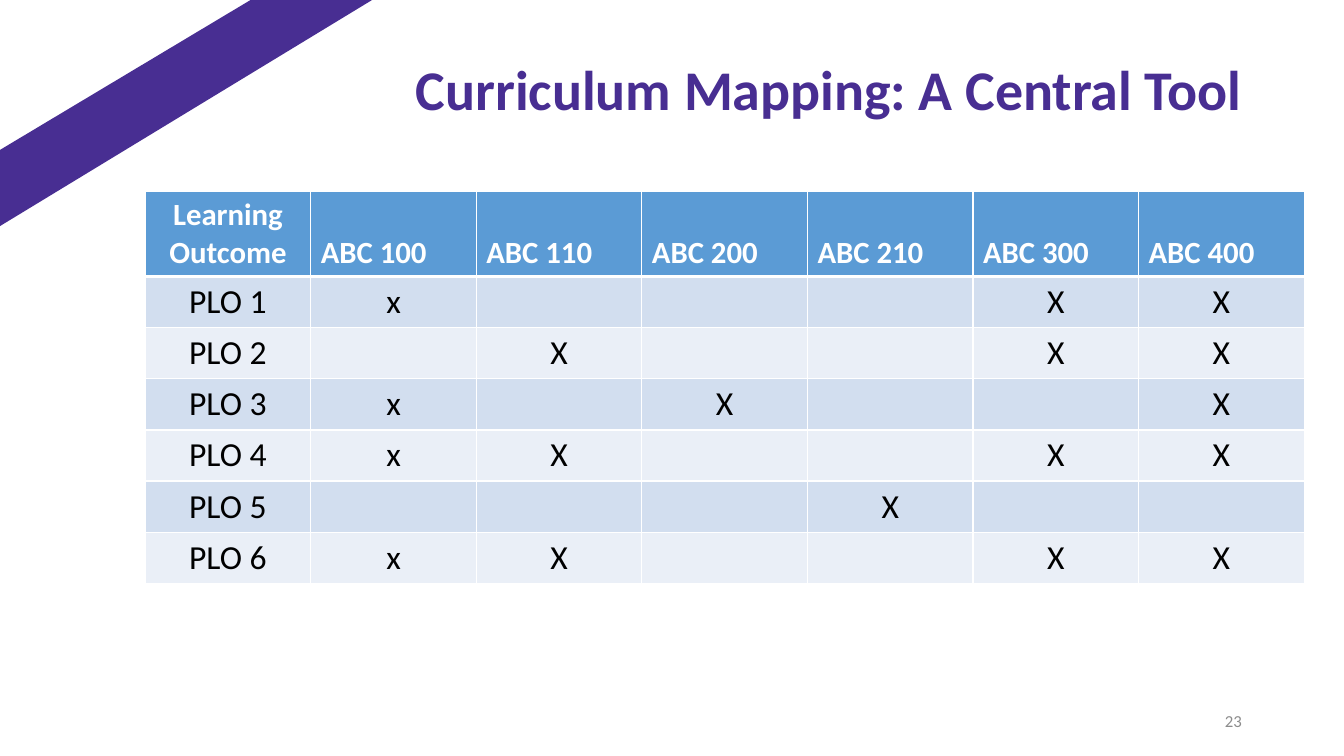
from dataclasses import dataclass

from lxml.etree import SubElement
from pptx import Presentation
from pptx.dml.color import RGBColor
from pptx.enum.text import MSO_ANCHOR as Anchor, PP_ALIGN as Align
from pptx.oxml.ns import qn
from pptx.util import Pt

TITLE = "Curriculum Mapping: A Central Tool"
SLIDE_NUMBER = "23"
HEADERS = ["Learning Outcome", "ABC 100", "ABC 110", "ABC 200",
           "ABC 210", "ABC 300", "ABC 400"]
OUTCOMES = [
    ("PLO 1", "x", "", "", "", "X", "X"),
    ("PLO 2", "", "X", "", "", "X", "X"),
    ("PLO 3", "x", "", "X", "", "", "X"),
    ("PLO 4", "x", "X", "", "", "X", "X"),
    ("PLO 5", "", "", "", "X", "", ""),
    ("PLO 6", "x", "X", "", "", "X", "X"),
]

# Left, top, width, height in points
TITLE_BOX = (66.2, 41, 828, 53.3)
NUMBER_BOX = (678.2, 500.4, 216, 28.8)
TABLE_LEFT, TABLE_TOP, TABLE_WIDTH = 103.7, 136.8, 828
HEADER_HEIGHT, ROW_HEIGHT = 60.8, 36.4
RIBBON = [(-7.5, 111.6), (192.2, -7.9), (242.6, -7.9), (276.5, -6.5), (-7.9, 166.3)]


@dataclass(frozen=True)
class Theme:
    font: str = "Calibri"
    purple: str = "482E92"
    header: str = "5B9BD5"
    bands: tuple = ("D2DEEF", "EAEFF7")
    white: str = "FFFFFF"
    black: str = "000000"
    grey: str = "8C8C8C"
    title_size: int = 40
    header_size: int = 22
    body_size: int = 24
    number_size: int = 12
    thin: int = 1
    thick: int = 3


THEME = Theme()


def write(frame, text, size, color, align, bold=False):
    frame.text = text
    paragraph = frame.paragraphs[0]
    paragraph.alignment = align
    for run in paragraph.runs:
        font = run.font
        font.name, font.size, font.bold = THEME.font, Pt(size), bold
        font.color.rgb = RGBColor.from_string(color)
    return paragraph


def place(shape, box):
    shape.left, shape.top, shape.width, shape.height = map(Pt, box)


def set_borders(cell, top, bottom):
    """Draw white cell borders; call before the cell is filled."""
    properties = cell._tc.get_or_add_tcPr()
    widths = {"lnL": THEME.thin, "lnR": THEME.thin, "lnT": top, "lnB": bottom}
    for side, width in widths.items():
        line = SubElement(properties, qn(f"a:{side}"), w=str(Pt(width)))
        fill = SubElement(line, qn("a:solidFill"))
        SubElement(fill, qn("a:srgbClr"), val=THEME.white)


def add_ribbon(slide):
    points = [(Pt(x), Pt(y)) for x, y in RIBBON]
    builder = slide.shapes.build_freeform(*points[0])
    builder.add_line_segments(points[1:], close=True)
    ribbon = builder.convert_to_shape()
    ribbon.shadow.inherit = False
    ribbon.fill.solid()
    ribbon.fill.fore_color.rgb = RGBColor.from_string(THEME.purple)
    ribbon.line.fill.background()


def add_title(slide):
    title = slide.shapes.title
    place(title, TITLE_BOX)
    frame = title.text_frame
    frame.word_wrap = True
    frame.vertical_anchor = Anchor.TOP
    paragraph = write(frame, TITLE, THEME.title_size, THEME.purple, Align.RIGHT, True)
    paragraph.line_spacing = 0.9


def add_curriculum_map(slide):
    rows = [HEADERS, *OUTCOMES]
    height = HEADER_HEIGHT + ROW_HEIGHT * len(OUTCOMES)
    table = slide.shapes.add_table(
        len(rows), len(HEADERS),
        *map(Pt, (TABLE_LEFT, TABLE_TOP, TABLE_WIDTH, height))).table
    table.first_row = table.horz_banding = False
    for column in table.columns:
        column.width = Pt(TABLE_WIDTH / len(HEADERS))
    for r, values in enumerate(rows):
        is_header = r == 0
        table.rows[r].height = Pt(HEADER_HEIGHT if is_header else ROW_HEIGHT)
        fill = THEME.header if is_header else THEME.bands[(r - 1) % 2]
        size = THEME.header_size if is_header else THEME.body_size
        color = THEME.white if is_header else THEME.black
        for c, text in enumerate(values):
            cell = table.cell(r, c)
            set_borders(cell, THEME.thick if r == 1 else THEME.thin,
                        THEME.thick if is_header else THEME.thin)
            cell.fill.solid()
            cell.fill.fore_color.rgb = RGBColor.from_string(fill)
            cell.vertical_anchor = Anchor.BOTTOM if is_header else Anchor.TOP
            align = Align.LEFT if is_header and c else Align.CENTER
            write(cell.text_frame, text, size, color, align, is_header)


def add_slide_number(slide):
    frame = slide.shapes.add_textbox(*map(Pt, NUMBER_BOX)).text_frame
    frame.word_wrap = True
    frame.vertical_anchor = Anchor.MIDDLE
    write(frame, SLIDE_NUMBER, THEME.number_size, THEME.grey, Align.RIGHT)


def main():
    presentation = Presentation()
    presentation.slide_width, presentation.slide_height = Pt(960), Pt(540)
    slide = presentation.slides.add_slide(presentation.slide_layouts[5])
    add_ribbon(slide)
    add_curriculum_map(slide)
    add_slide_number(slide)
    add_title(slide)
    presentation.save("out.pptx")


if __name__ == "__main__":
    main()
